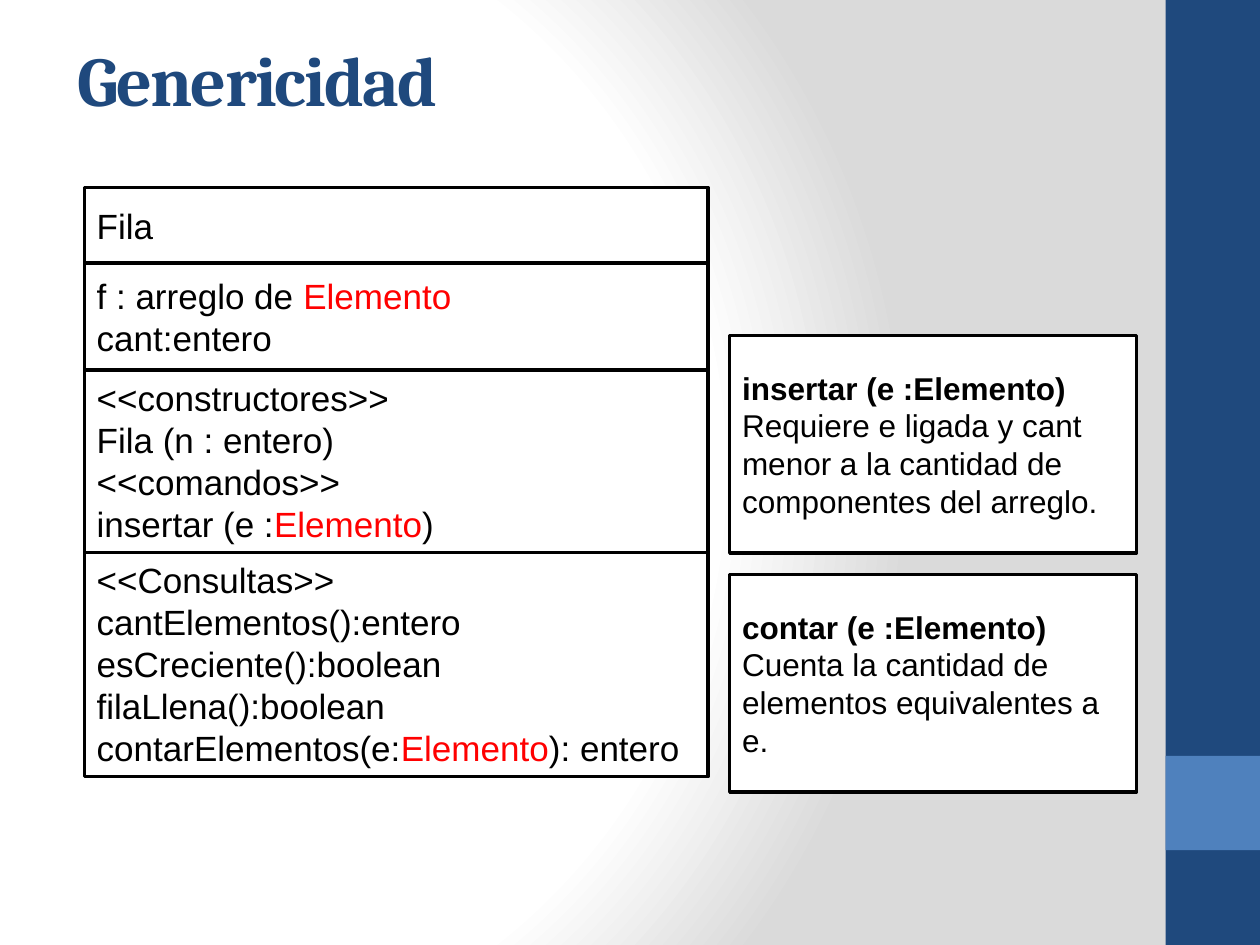
from lxml.etree import SubElement, fromstring
from pptx import Presentation
from pptx.dml.color import RGBColor
from pptx.enum.shapes import MSO_SHAPE as Shape
from pptx.enum.text import MSO_ANCHOR as Anchor, PP_ALIGN as Align
from pptx.oxml.ns import nsdecls, qn
from pptx.util import Cm, Pt

NAVY = RGBColor(0x1F, 0x49, 0x7D)
BLUE = RGBColor(0x4F, 0x81, 0xBD)
WHITE = RGBColor(0xFF, 0xFF, 0xFF)
GREY = RGBColor(0xDA, 0xDA, 0xDA)
BLACK = RGBColor(0, 0, 0)
RED = RGBColor(0xFF, 0, 0)

GENERIC_TYPE = "Elemento"


class SlideBuilder:
    title_format = {"name": "Cambria", "size": Pt(40), "bold": True}
    class_format = {"name": "Arial", "size": Pt(20), "bold": False}
    note_format = {"name": "Arial", "size": Pt(18), "bold": False}
    border_width = Pt(2)

    def __init__(self, slide):
        self.slide = slide

    def background(self, stops, focus):
        """Circular gradient; stops and focus are percentages."""
        common = self.slide.element.cSld
        background = fromstring(
            f'<p:bg {nsdecls("p", "a")}><p:bgPr><a:gradFill rotWithShape="1">'
            '<a:gsLst/><a:path path="circle"/></a:gradFill><a:effectLst/>'
            "</p:bgPr></p:bg>"
        )
        stop_list = background.find(".//" + qn("a:gsLst"))
        for position, color in stops:
            stop = SubElement(stop_list, qn("a:gs"), pos=str(position * 1000))
            SubElement(stop, qn("a:srgbClr"), val=str(color))
        path = background.find(".//" + qn("a:path"))
        edges = {side: str(value * 1000) for side, value in zip("ltrb", focus)}
        SubElement(path, qn("a:fillToRect"), edges)
        common.insert(0, background)

    def run(self, paragraph, text, formats, color):
        run = paragraph.add_run()
        run.text = text
        for name, value in formats.items():
            setattr(run.font, name, value)
        run.font.color.rgb = color
        return run

    def title(self, text, left, top, width, height):
        shape = self.slide.shapes.title
        place = {"left": left, "top": top, "width": width, "height": height}
        for name, value in place.items():
            setattr(shape, name, Cm(value))
        frame = shape.text_frame
        frame.vertical_anchor = Anchor.MIDDLE
        paragraph = frame.paragraphs[0]
        paragraph.alignment = Align.LEFT
        run = self.run(paragraph, text, self.title_format, NAVY)
        run.font._element.set("spc", "-100")

    def rectangle(self, left, top, width, height, fill, line=None):
        shape = self.slide.shapes.add_shape(
            Shape.RECTANGLE, Cm(left), Cm(top), Cm(width), Cm(height)
        )
        shape.shadow.inherit = False
        shape.fill.solid()
        shape.fill.fore_color.rgb = fill
        if line is None:
            shape.line.fill.background()
        else:
            shape.line.color.rgb = line
            shape.line.width = self.border_width
        return shape

    def box(self, left, top, width, height, anchor):
        """Bordered box; returns its text frame."""
        frame = self.rectangle(left, top, width, height, WHITE, BLACK).text_frame
        frame.word_wrap = True
        frame.vertical_anchor = anchor
        return frame

    def paragraphs(self, frame, lines):
        for index, line in enumerate(lines):
            paragraph = frame.add_paragraph() if index else frame.paragraphs[0]
            paragraph.alignment = Align.LEFT
            yield paragraph, line

    def class_section(self, left, top, width, height, anchor, lines):
        frame = self.box(left, top, width, height, anchor)
        for paragraph, line in self.paragraphs(frame, lines):
            # The generic type stands out in red
            before, generic, after = line.partition(GENERIC_TYPE + ")")
            if not generic and line.endswith(" " + GENERIC_TYPE):
                before, generic = line[: -len(GENERIC_TYPE)], GENERIC_TYPE
            elif generic:
                generic, after = GENERIC_TYPE, ")" + after
            for text, color in ((before, BLACK), (generic, RED), (after, BLACK)):
                if text:
                    self.run(paragraph, text, self.class_format, color)

    def note(self, left, top, width, height, heading, body):
        frame = self.box(left, top, width, height, Anchor.MIDDLE)
        for paragraph, line in self.paragraphs(frame, (heading, body)):
            formats = {**self.note_format, "bold": line == heading}
            self.run(paragraph, line, formats, BLACK)


# Height, anchor and lines of each section of the class diagram
CLASS_SECTIONS = [
    (1.52, Anchor.MIDDLE, ["Fila"]),
    (2.16, Anchor.MIDDLE, ["f : arreglo de Elemento", "cant:entero"]),
    (3.68, Anchor.TOP, ["<<constructores>>", "Fila (n : entero)",
                        "<<comandos>>", "insertar (e :Elemento)"]),
    (4.52, Anchor.TOP, ["<<Consultas>>", "cantElementos():entero",
                        "esCreciente():boolean", "filaLlena():boolean",
                        "contarElementos(e:Elemento): entero"]),
]
NOTES = [
    ("insertar (e :Elemento)",
     "Requiere e ligada y cant menor a la cantidad de componentes del arreglo."),
    ("contar (e :Elemento)",
     "Cuenta la cantidad de elementos equivalentes a e."),
]


def main():
    presentation = Presentation()
    presentation.slide_width, presentation.slide_height = Cm(25.4), Cm(19.05)
    slide = presentation.slides.add_slide(presentation.slide_layouts[5])
    builder = SlideBuilder(slide)

    # Background and side band
    builder.background([(0, WHITE), (75, WHITE), (100, GREY)], (20, 50, 100, 50))
    builder.rectangle(23.5, 0, 1.9, 19.05, NAVY)
    builder.rectangle(23.5, 15.24, 1.9, 1.9, BLUE)

    builder.title("Genericidad", 1.3, 0, 21.16, 3.18)

    # Class diagram: sections stacked without gaps
    top = 3.78
    for height, anchor, lines in CLASS_SECTIONS:
        builder.class_section(1.7, top, 12.57, height, anchor, lines)
        top += height

    # Notes on the operations
    for index, (heading, body) in enumerate(NOTES):
        builder.note(14.71, 6.76 + index * 4.82, 8.2, 4.39, heading, body)

    presentation.save("out.pptx")


if __name__ == "__main__":
    main()
